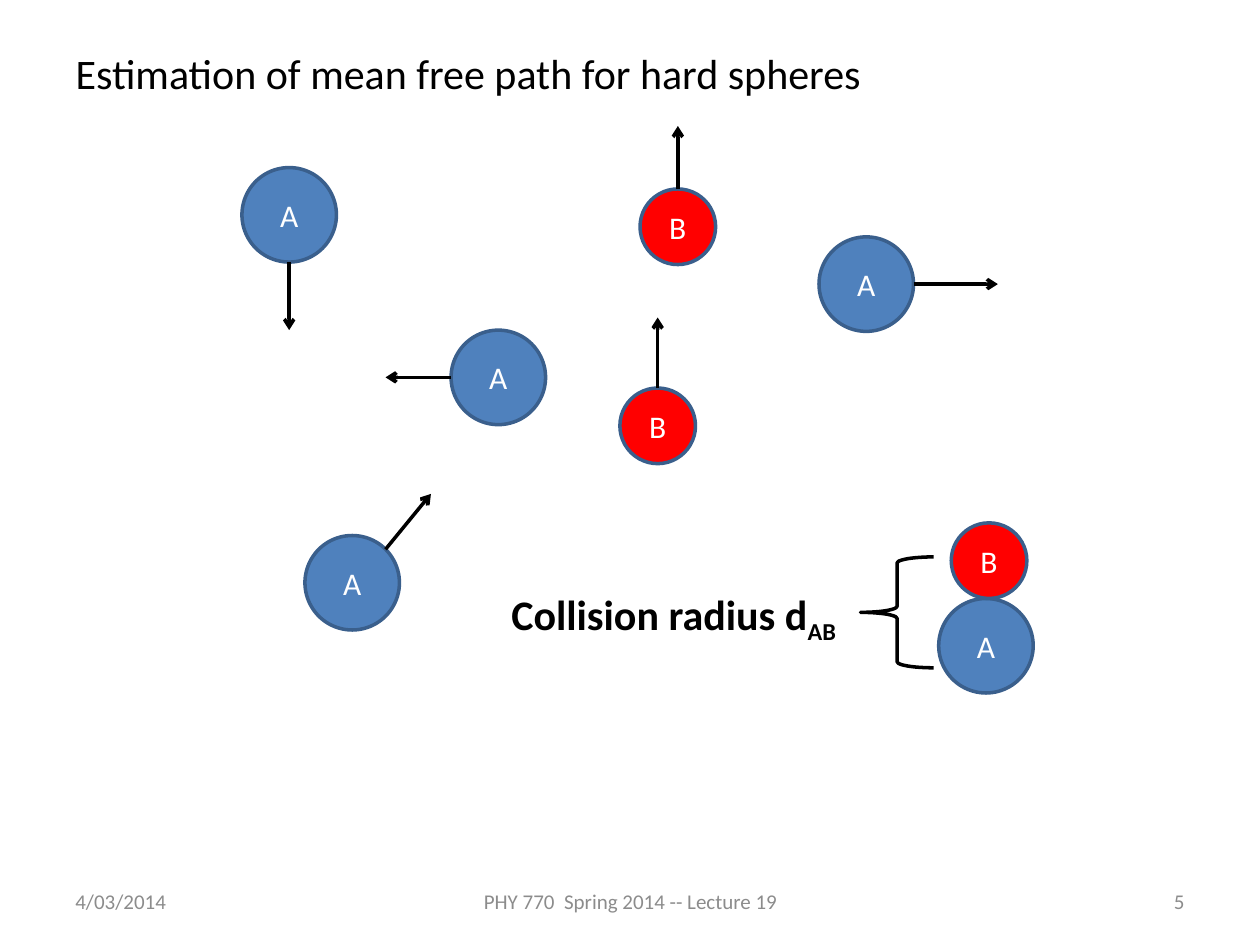
from math import cos, radians, sin

from lxml.etree import SubElement
from pptx import Presentation
from pptx.dml.color import RGBColor
from pptx.enum.shapes import MSO_CONNECTOR, MSO_SHAPE
from pptx.enum.text import MSO_ANCHOR, PP_ALIGN
from pptx.oxml.ns import qn
from pptx.util import Inches, Pt

TITLE = "Estimation of mean free path for hard spheres"
RADIUS_LABEL = [("Collision radius d", None), ("AB", "-25000")]
FOOTERS = [
    ("4/03/2014", 0.5, 2.33, PP_ALIGN.LEFT),
    ("PHY 770  Spring 2014 -- Lecture 19", 3.42, 3.17, PP_ALIGN.CENTER),
    ("5", 7.17, 2.33, PP_ALIGN.RIGHT),
]

# kind: diameter, fill
SPHERES = {"A": (0.75, "4F81BD"), "B": (0.6, "FF0000")}

# kind, left, top, angle where the arrow leaves (clockwise from right), arrow extent
MOVING = [
    ("A", 1.92, 1.33, 90, (0, 0.54)),
    ("A", 3.58, 2.62, 180, (-0.52, 0)),
    ("A", 6.5, 1.88, 0, (0.67, 0)),
    ("A", 2.42, 4.25, -45, (0.36, -0.44)),
    ("B", 4.92, 3.08, -90, (0, -0.56)),
    ("B", 5.08, 1.5, -90, (0, -0.5)),
]
COLLIDING = [("A", 7.45, 4.75), ("B", 7.55, 4.15)]


def color(hex_code):
    return RGBColor.from_string(hex_code)


def style_font(font, size, hex_code, bold=False):
    font.name = "Calibri"
    font.size = Pt(size)
    font.bold = bold
    font.color.rgb = color(hex_code)


def style_line(line, hex_code):
    line.color.rgb = color(hex_code)
    line.width = Pt(2)


def add_text_box(slide, left, top, width, height, anchor):
    box = slide.shapes.add_textbox(*map(Inches, (left, top, width, height)))
    box.text_frame.word_wrap = True
    box.text_frame.vertical_anchor = anchor
    return box.text_frame.paragraphs[0]


def add_sphere(slide, kind, left, top):
    diameter, fill = SPHERES[kind]
    sphere = slide.shapes.add_shape(
        MSO_SHAPE.OVAL, *map(Inches, (left, top, diameter, diameter)))
    sphere.shadow.inherit = False
    sphere.fill.solid()
    sphere.fill.fore_color.rgb = color(fill)
    style_line(sphere.line, "3A5F8C")
    frame = sphere.text_frame
    frame.text = kind
    frame.vertical_anchor = MSO_ANCHOR.MIDDLE
    frame.paragraphs[0].alignment = PP_ALIGN.CENTER
    style_font(frame.paragraphs[0].runs[0].font, 18, "FFFFFF")


def add_velocity(slide, kind, left, top, angle, extent):
    """Draw an arrow from the sphere's rim."""
    radius = SPHERES[kind][0] / 2
    x = left + radius * (1 + cos(radians(angle)))
    y = top + radius * (1 + sin(radians(angle)))
    arrow = slide.shapes.add_connector(
        MSO_CONNECTOR.STRAIGHT,
        *map(Inches, (x, y, x + extent[0], y + extent[1])))
    style_line(arrow.line, "000000")
    SubElement(arrow.line._get_or_add_ln(), qn("a:tailEnd"), type="arrow")
    SubElement(arrow._element.spPr, qn("a:effectLst"))


def main():
    prs = Presentation()
    prs.slide_width, prs.slide_height = Inches(10), Inches(7.5)
    slide = prs.slides.add_slide(prs.slide_layouts[5])

    title = slide.shapes.title
    title.left, title.top = Inches(0.5), Inches(0.33)
    title.width, title.height = Inches(8.17), Inches(0.5)
    title.text_frame.text = TITLE
    title.text_frame.vertical_anchor = MSO_ANCHOR.TOP
    heading = title.text_frame.paragraphs[0]
    heading.alignment = PP_ALIGN.LEFT
    style_font(heading.runs[0].font, 24, "000000")

    for text, left, width, alignment in FOOTERS:
        footer = add_text_box(slide, left, 6.95, width, 0.4, MSO_ANCHOR.MIDDLE)
        footer.text = text
        footer.alignment = alignment
        style_font(footer.runs[0].font, 12, "8C8C8C")

    for kind, left, top, angle, extent in MOVING:
        add_sphere(slide, kind, left, top)
        add_velocity(slide, kind, left, top, angle, extent)

    radius_label = add_text_box(slide, 3.96, 4.62, 4.54, 0.5, MSO_ANCHOR.TOP)
    for text, baseline in RADIUS_LABEL:
        run = radius_label.add_run()
        run.text = text
        style_font(run.font, 24, "000000", bold=True)
        if baseline:
            run._r.get_or_add_rPr().set("baseline", baseline)

    for kind, left, top in COLLIDING:
        add_sphere(slide, kind, left, top)

    brace = slide.shapes.add_shape(
        MSO_SHAPE.LEFT_BRACE, *map(Inches, (6.83, 4.42, 0.58, 0.88)))
    brace.shadow.inherit = False
    brace.fill.background()
    style_line(brace.line, "000000")

    prs.save("out.pptx")


if __name__ == "__main__":
    main()
